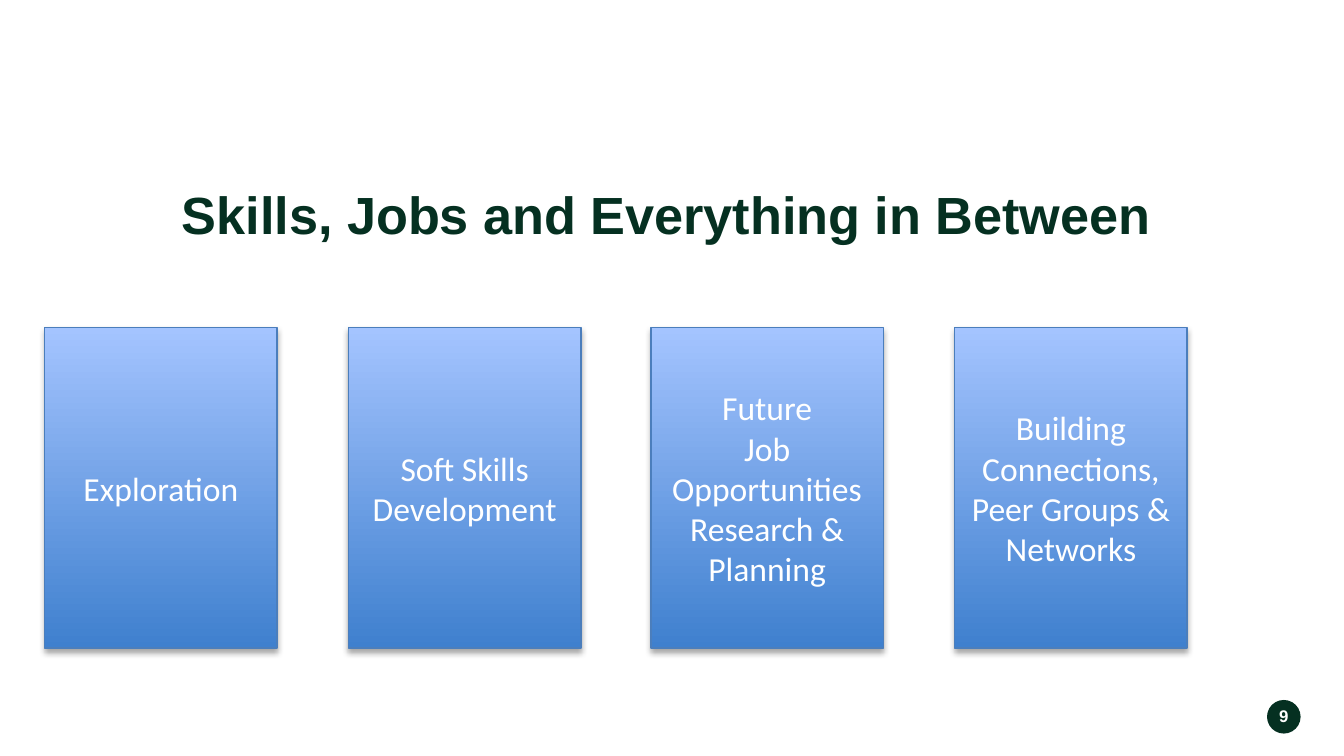
import lxml.etree
import pptx
import pptx.dml.color
import pptx.enum.shapes
import pptx.enum.text
import pptx.oxml.ns
import pptx.util

PX = 9525
COLORS = {
    "green": "053021",
    "white": "FFFFFF",
    "card_bottom": "3F80CE",
    "card_top": "A4C4FF",
    "card_edge": "4B7EBC",
    "shadow": "000000",
}
TOPICS = [
    "Exploration",
    "Soft Skills\nDevelopment",
    "Future\nJob Opportunities\nResearch & Planning",
    "Building Connections, Peer Groups & Networks",
]


def color(name):
    """Return the named colour."""
    return pptx.dml.color.RGBColor.from_string(COLORS[name])


def scaled(box):
    """Turn a box of left, top, width and height from px into EMU."""
    return [length * PX for length in box]


def write(part, text, font_name, size, color_name, anchor, bold=False):
    """Write centred text into a shape and format its runs."""
    frame = part.text_frame
    frame.word_wrap = True
    frame.vertical_anchor = anchor
    frame.text = text
    for paragraph in frame.paragraphs:
        paragraph.alignment = pptx.enum.text.PP_ALIGN.CENTER
        for run in paragraph.runs:
            run.font.name = font_name
            run.font.size = pptx.util.Pt(size)
            run.font.bold = bold
            run.font.color.rgb = color(color_name)


def set_margins(frame, side, end):
    """Set the side and end margins of a text frame in px."""
    frame.margin_left = frame.margin_right = side * PX
    frame.margin_top = frame.margin_bottom = end * PX


def add_soft_shadow(part):
    """Give a shape a soft shadow below it."""
    qn = pptx.oxml.ns.qn
    part.shadow.inherit = False
    effects = part._element.spPr.find(qn("a:effectLst"))
    shadow = lxml.etree.SubElement(
        effects, qn("a:outerShdw"), blurRad="40000", dist="23000", dir="5400000", rotWithShape="0"
    )
    tint = lxml.etree.SubElement(shadow, qn("a:srgbClr"), val=COLORS["shadow"])
    lxml.etree.SubElement(tint, qn("a:alpha"), val="35000")


def format_title(slide, box):
    """Place and write the slide title."""
    title = slide.shapes.title
    title.left, title.top, title.width, title.height = scaled(box)
    top = pptx.enum.text.MSO_ANCHOR.TOP
    write(title, "Skills, Jobs and Everything in Between ", "Arial", 28, "green", top, bold=True)
    title.text_frame.paragraphs[0].line_spacing = 0.8
    set_margins(title.text_frame, 19, 10)


def add_card(slide, box, topic):
    """Add one topic card with a gradient fill."""
    card = slide.shapes.add_shape(pptx.enum.shapes.MSO_SHAPE.RECTANGLE, *scaled(box))
    card.fill.gradient()
    card.fill.gradient_angle = 90
    for stop, name in zip(card.fill.gradient_stops, ("card_bottom", "card_top")):
        stop.color.rgb = color(name)
    card.line.color.rgb = color("card_edge")
    card.line.width = pptx.util.Pt(0.75)
    add_soft_shadow(card)
    write(card, topic, "Calibri", 18, "white", pptx.enum.text.MSO_ANCHOR.MIDDLE)


def add_cards(slide, box):
    """Spread the topic cards evenly across a box."""
    left, top, width, height = box
    card_width = 166
    step = (width - card_width) / (len(TOPICS) - 1)
    for index, topic in enumerate(TOPICS):
        add_card(slide, (left + round(index * step), top, card_width, height), topic)


def add_page_badge(slide, box):
    """Add the page number on a round badge."""
    left, top, width, height = box
    badge = slide.shapes.add_shape(pptx.enum.shapes.MSO_SHAPE.OVAL, *scaled(box))
    badge.shadow.inherit = False
    badge.fill.solid()
    badge.fill.fore_color.rgb = color("green")
    badge.line.fill.background()
    number = slide.shapes.add_textbox(*scaled((left, top + 1, width, height - 3)))
    write(number, "9", "Arial", 9, "white", pptx.enum.text.MSO_ANCHOR.MIDDLE, bold=True)
    set_margins(number.text_frame, 0, 0)


def main():
    """Build and save the slide."""
    deck = pptx.Presentation()
    deck.slide_width, deck.slide_height = 960 * PX, 540 * PX
    slide = deck.slides.add_slide(deck.slide_layouts.get_by_name("Title Only"))
    add_page_badge(slide, (905, 500, 24, 24))
    format_title(slide, (32, 129, 898, 93))
    add_cards(slide, (32, 234, 816, 229))
    deck.save("out.pptx")


if __name__ == "__main__":
    main()
